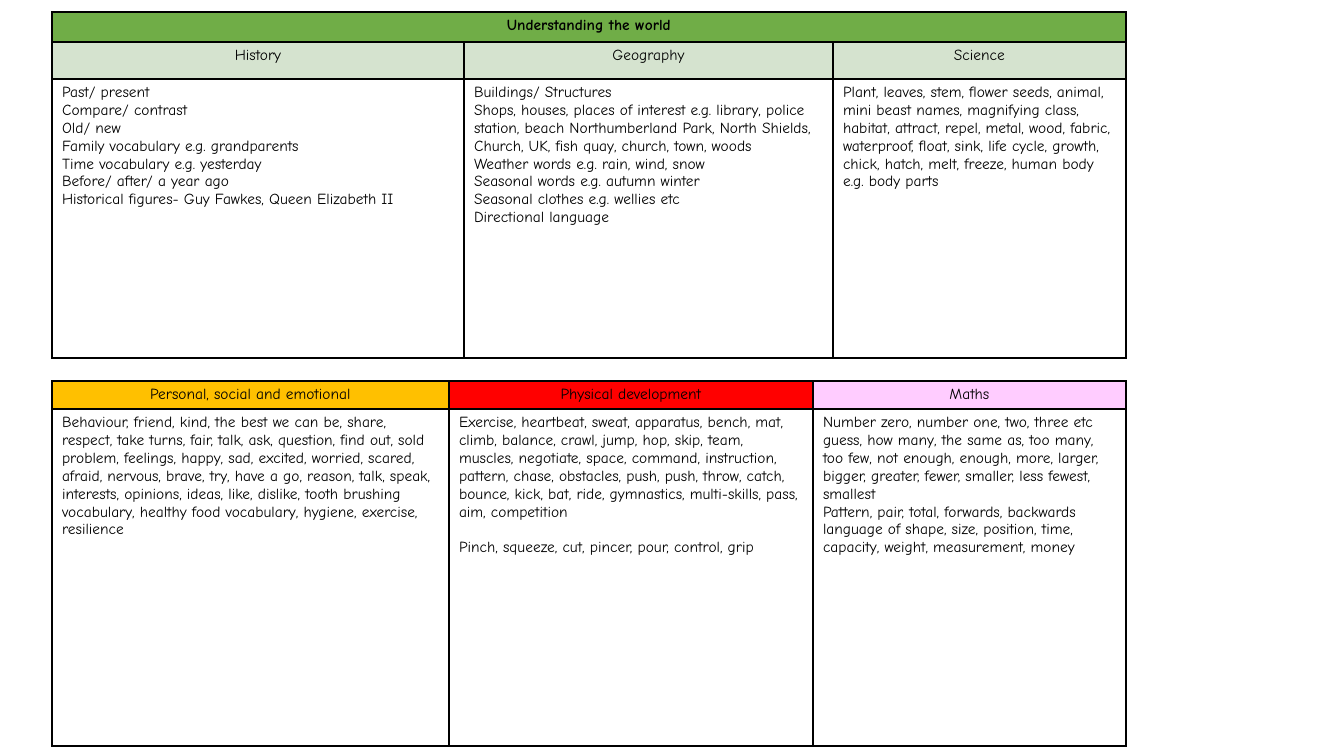
from lxml import etree
from pptx import Presentation
from pptx.dml.color import RGBColor
from pptx.enum.text import PP_ALIGN
from pptx.oxml.ns import qn
from pptx.util import Pt

EMU_PER_PX = 914400 / 100.8
CENTER = PP_ALIGN.CENTER
LEFT = PP_ALIGN.LEFT
FONT_NAME = "Comic Neue"
FONT_SIZE = 11
BLACK = "000000"
GREEN = "70AD47"
PALE_GREEN = "D5E3CF"
LINE_GAP = 12.7

HISTORY = [
    "Past/ present",
    "Compare/ contrast",
    "Old/ new",
    "Family vocabulary e.g. grandparents",
    "Time vocabulary e.g. yesterday",
    "Before/ after/ a year ago",
    "Historical figures- Guy Fawkes, Queen Elizabeth II",
]
GEOGRAPHY = [
    "Buildings/ Structures",
    "Shops, houses, places of interest e.g. library, police station, beach "
    "Northumberland Park, North Shields, Church, UK, fish quay, church, town, woods",
    "Weather words e.g. rain, wind, snow",
    "Seasonal words e.g. autumn winter",
    "Seasonal clothes e.g. wellies etc",
    "Directional language",
]
SCIENCE = [
    "Plant, leaves, stem, flower seeds, animal, mini beast names, magnifying class, "
    "habitat, attract, repel, metal, wood, fabric, waterproof, float, sink, life cycle, "
    "growth, chick, hatch, melt, freeze, human body e.g. body parts",
]
PERSONAL = [
    "Behaviour, friend, kind, the best we can be, share, respect, take turns, fair, talk, "
    "ask, question, find out, sold problem, feelings, happy, sad, excited, worried, scared, "
    "afraid, nervous, brave, try, have a go, reason, talk, speak, interests, opinions, ideas, "
    "like, dislike, tooth brushing vocabulary, healthy food vocabulary, hygiene, exercise, "
    "resilience",
]
PHYSICAL = [
    "Exercise, heartbeat, sweat, apparatus, bench, mat, climb, balance, crawl, jump, hop, "
    "skip, team, muscles, negotiate, space, command, instruction, pattern, chase, obstacles, "
    "push, push, throw, catch, bounce, kick, bat, ride, gymnastics, multi-skills, pass, aim, "
    "competition",
    "Pinch, squeeze, cut, pincer, pour, control, grip",
]
MATHS = [
    "Number zero, number one, two, three etc",
    "guess, how many, the same as, too many, too few, not enough, enough, more, larger, "
    "bigger, greater, fewer, smaller, less fewest, smallest",
    "Pattern, pair, total, forwards, backwards",
    "language of shape, size, position, time, capacity, weight, measurement, money",
]


def px(length):
    return round(length * EMU_PER_PX)


def rgb(hex_colour):
    return RGBColor.from_string(hex_colour)


def add_borders(cell):
    properties = cell._tc.get_or_add_tcPr()
    for side in ("a:lnL", "a:lnR", "a:lnT", "a:lnB"):
        line = etree.SubElement(properties, qn(side), w=str(Pt(1)))
        fill = etree.SubElement(line, qn("a:solidFill"))
        etree.SubElement(fill, qn("a:srgbClr"), val=BLACK)


def write_cell(cell, lines, align=LEFT, bold=False):
    frame = cell.text_frame
    font_format = {"name": FONT_NAME, "size": Pt(FONT_SIZE), "bold": bold}
    for index, line in enumerate(lines):
        paragraph = frame.add_paragraph() if index else frame.paragraphs[0]
        paragraph.alignment = align
        run = paragraph.add_run()
        run.text = line
        for attribute, value in font_format.items():
            setattr(run.font, attribute, value)
        run.font.color.rgb = rgb(BLACK)


def write_heading(cell, heading, colour, bold=False):
    write_cell(cell, [heading], CENTER, bold)
    cell.fill.solid()
    cell.fill.fore_color.rgb = rgb(colour)


def add_vocabulary_table(slide, top, widths, heights, subjects):
    """Add a bordered table whose last two rows hold subject headings and words."""
    table = slide.shapes.add_table(
        len(heights), len(widths), px(52), px(top), px(sum(widths)), px(sum(heights))
    ).table
    table.first_row = False
    table.horz_banding = False
    for column, width in zip(table.columns, widths):
        column.width = px(width)
    for row, height in zip(table.rows, heights):
        row.height = px(height)
    for cell in table.iter_cells():
        add_borders(cell)
        cell.fill.background()

    words_row = len(heights) - 1
    for column, (heading, colour, words) in enumerate(subjects):
        write_heading(table.cell(words_row - 1, column), heading, colour)
        write_cell(table.cell(words_row, column), words)
    return table


def main():
    deck = Presentation()
    deck.slide_width = px(1344)
    deck.slide_height = px(756)
    slide = deck.slides.add_slide(deck.slide_layouts[6])

    world = add_vocabulary_table(slide, 12, [412, 369, 293], [30, 37, 279], [
        ("History", PALE_GREEN, HISTORY),
        ("Geography", PALE_GREEN, GEOGRAPHY),
        ("Science", PALE_GREEN, SCIENCE),
    ])
    title = world.cell(0, 0)
    title.merge(world.cell(0, 2))
    write_heading(title, "Understanding the world", GREEN, bold=True)

    development = add_vocabulary_table(slide, 381, [397, 364, 313], [28, 337], [
        ("Personal, social and emotional", "FFC000", PERSONAL),
        ("Physical development", "FF0000", PHYSICAL),
        ("Maths", "FFCCFF", MATHS),
    ])
    fine_motor_words = development.cell(1, 1).text_frame.paragraphs[1]
    fine_motor_words.space_before = Pt(LINE_GAP)

    deck.save("out.pptx")


if __name__ == "__main__":
    main()
